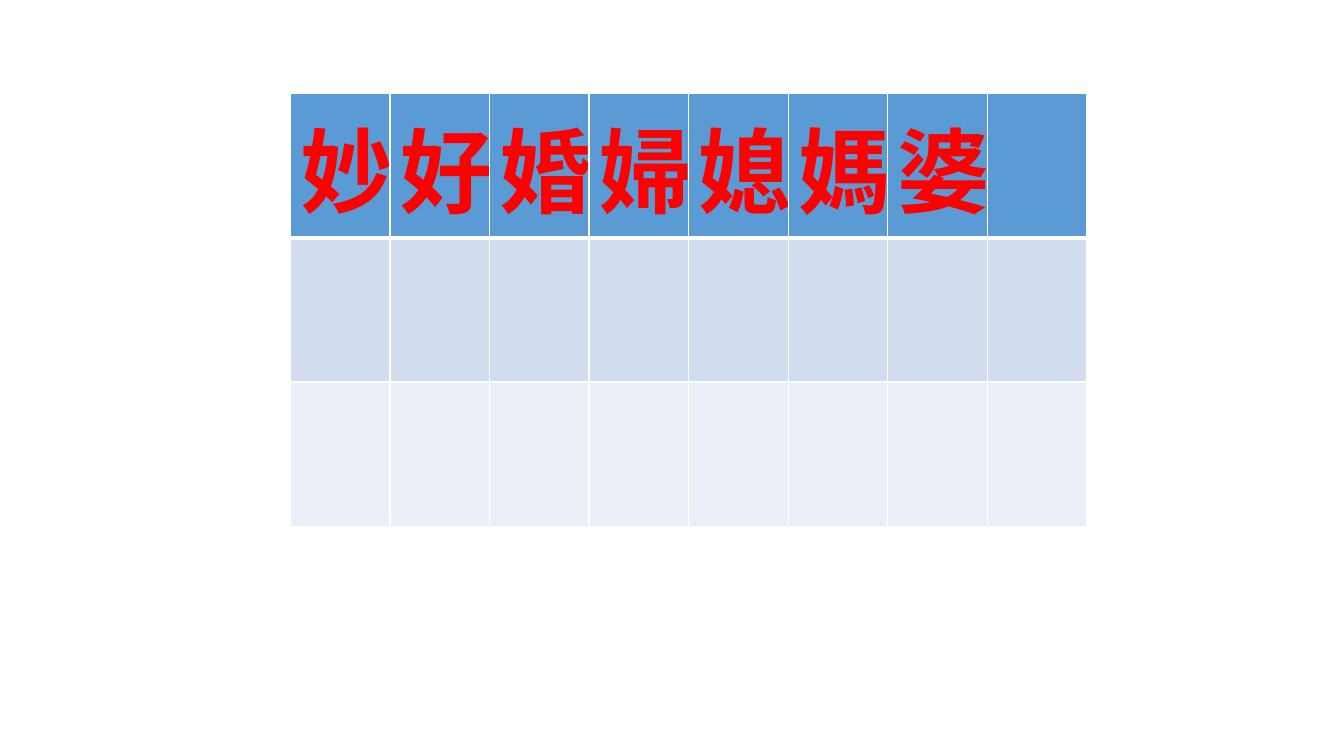
from lxml import etree
from pptx import Presentation
from pptx.dml.color import RGBColor
from pptx.enum.text import MSO_ANCHOR, PP_ALIGN
from pptx.oxml.ns import qn
from pptx.util import Inches, Pt

MIDDLE = MSO_ANCHOR.MIDDLE
CENTER = PP_ALIGN.CENTER
BLANK_LAYOUT = 6
COLORS = {
    "header": "5B9BD5",
    "band": "D2DEEF",
    "plain": "EAEFF7",
    "border": "FFFFFF",
    "text": "FF0000",
}
ROW_FILLS = ["header", "band", "plain"]
CHARACTERS = "妙好婚婦媳媽婆"
COLUMN_COUNT = 8


def add_border(cell, side, points):
    """Draw one side of a cell in the border colour."""
    line = etree.SubElement(cell._tc.get_or_add_tcPr(), qn(f"a:ln{side}"), w=str(Pt(points)))
    fill = etree.SubElement(line, qn("a:solidFill"))
    etree.SubElement(fill, qn("a:srgbClr"), val=COLORS["border"])


def style_cell(cell, row):
    """Give a cell its borders and the fill of its row."""
    widths = {"L": 1, "R": 1, "T": 3 if row == 1 else 1, "B": 3 if row == 0 else 1}
    for side, points in widths.items():
        add_border(cell, side, points)
    cell.fill.solid()
    cell.fill.fore_color.rgb = RGBColor.from_string(COLORS[ROW_FILLS[row]])


def write_character(cell, character):
    """Write one large character in the middle of a cell."""
    cell.text = character
    cell.vertical_anchor = MIDDLE
    para = cell.text_frame.paragraphs[0]
    para.alignment = CENTER
    para.font.name = "Arial"
    para.font.size = Pt(66)
    para.font.bold = True
    para.font.color.rgb = RGBColor.from_string(COLORS["text"])


def add_character_table(page):
    """Add the grid with the characters along its header row."""
    row_count = len(ROW_FILLS)
    table = page.shapes.add_table(
        row_count, COLUMN_COUNT,
        Inches(2.88), Inches(0.93), Inches(7.9), Inches(1.43) * row_count,
    ).table
    for row in range(row_count):
        for column in range(COLUMN_COUNT):
            style_cell(table.cell(row, column), row)
    for column, character in enumerate(CHARACTERS):
        write_character(table.cell(0, column), character)


def main():
    """Build the deck and save it."""
    deck = Presentation()
    deck.slide_width = Inches(13.33)
    deck.slide_height = Inches(7.5)
    page = deck.slides.add_slide(deck.slide_layouts[BLANK_LAYOUT])
    add_character_table(page)
    deck.save("out.pptx")


if __name__ == "__main__":
    main()
